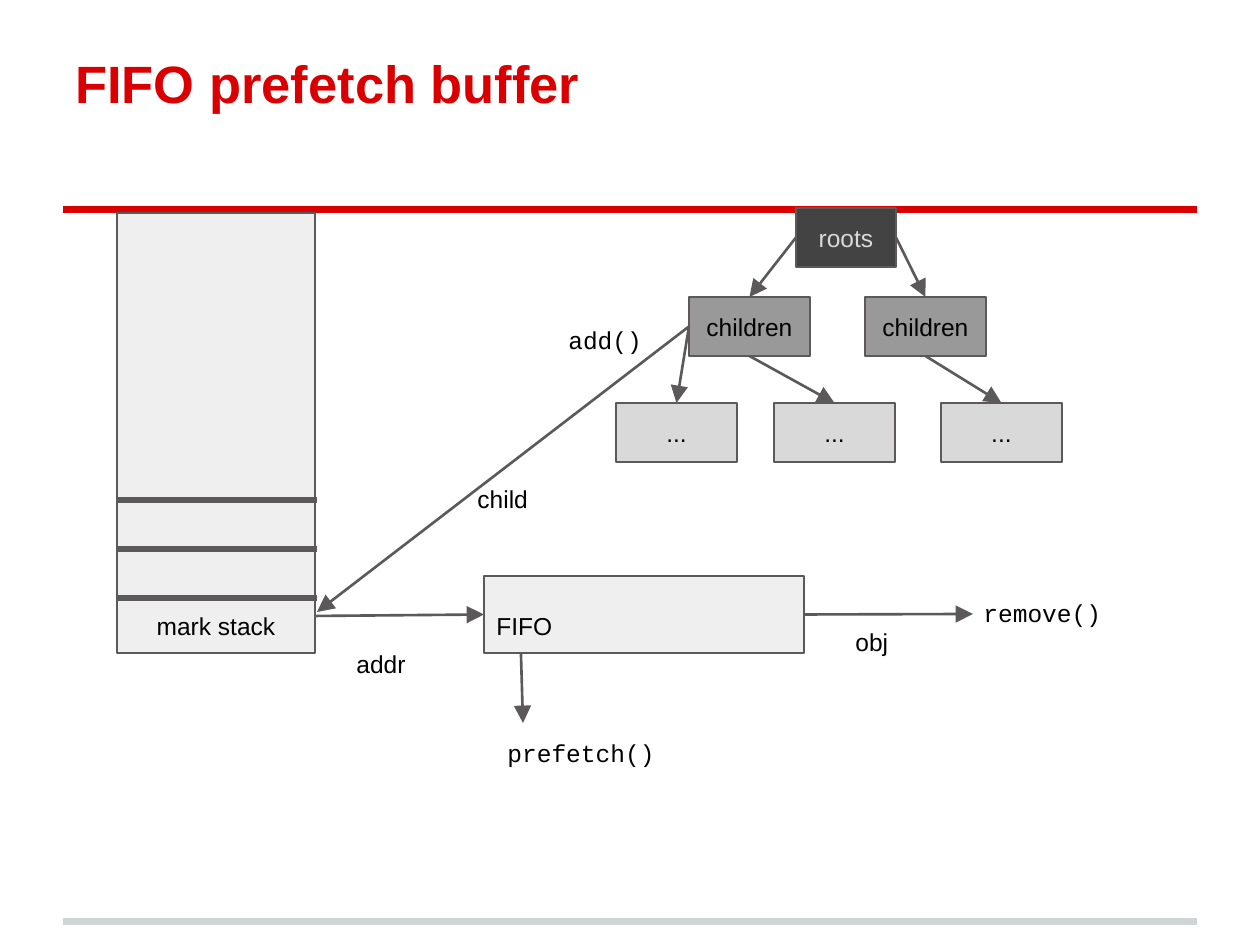
from lxml.etree import SubElement
from pptx import Presentation
from pptx.dml.color import RGBColor
from pptx.enum.shapes import MSO_CONNECTOR as Connector, MSO_SHAPE as Shape
from pptx.enum.text import MSO_ANCHOR as Anchor, PP_ALIGN as Align
from pptx.oxml.ns import qn
from pptx.util import Emu, Inches, Pt

PX = 914400 / 126
RED = RGBColor(0xDA, 0x00, 0x02)
RULE_GRAY = RGBColor(0xCF, 0xD4, 0xD4)
OUTLINE = RGBColor(0x5B, 0x59, 0x5A)
PALE = RGBColor(0xEF, 0xEF, 0xEF)
LIGHT = RGBColor(0xD9, 0xD9, 0xD9)
MEDIUM = RGBColor(0x99, 0x99, 0x99)
DARK = RGBColor(0x43, 0x43, 0x43)
BLACK = RGBColor(0x00, 0x00, 0x00)

TOP, LEFT, BOTTOM, RIGHT = range(4)
SANS, MONO = "Arial", "Courier New"

TITLE = ("FIFO prefetch buffer", (63, 38, 1134, 158))
RULES = [(922, RULE_GRAY), (210, RED)]
RULE_SPAN = (63, 1197)

NODE_HEIGHT, NODE_WIDTH = 59, 121
TREE_ROWS = [
    (208, 100, DARK, LIGHT, [("roots", "roots", 796)]),
    (297, NODE_WIDTH, MEDIUM, BLACK,
     [("left child", "children", 689), ("right child", "children", 865)]),
    (403, NODE_WIDTH, LIGHT, BLACK,
     [("leaf 1", "...", 616), ("leaf 2", "...", 774), ("leaf 3", "...", 941)]),
]
BUFFERS = [
    ("stack", "mark stack", (117, 213, 198, 440), Align.CENTER),
    ("fifo", "FIFO", (484, 576, 320, 77), Align.LEFT),
]
STACK_SPAN = (117, 317)
STACK_DIVIDERS = [500, 549, 598]

ARROWS = [
    (("roots", LEFT), ("left child", TOP)),
    (("roots", RIGHT), ("right child", TOP)),
    (("left child", LEFT), ("leaf 1", TOP)),
    (("left child", BOTTOM), ("leaf 2", TOP)),
    (("right child", BOTTOM), ("leaf 3", TOP)),
    (("left child", LEFT), (317, 612)),
    ((315, 616), ("fifo", LEFT)),
    (("fifo", RIGHT), (973, 614)),
    ((521, 654), (523, 723)),
]

LABEL_HEIGHT = 103
LABELS = [
    ("remove()", 971, 585, 160, MONO),
    ("prefetch()", 495, 725, 181, MONO),
    ("addr", 344, 636, 84, SANS),
    ("add()", 556, 312, 112, MONO),
    ("child", 465, 471, 84, SANS),
    ("obj", 843, 614, 68, SANS),
]

presentation = Presentation()
presentation.slide_width = Inches(10)
presentation.slide_height = Inches(7.5)
slide = presentation.slides.add_slide(presentation.slide_layouts[6])
boxes = {}


def px(*lengths):
    return [Emu(round(length * PX)) for length in lengths]


def write(shape, text, color=BLACK, font=SANS, size=14, bold=False,
          align=Align.LEFT, anchor=Anchor.TOP):
    frame = shape.text_frame
    frame.word_wrap = True
    frame.vertical_anchor = anchor
    for side in ("left", "top", "right", "bottom"):
        setattr(frame, f"margin_{side}", Inches(0.1))
    paragraph = frame.paragraphs[0]
    paragraph.alignment = align
    run = paragraph.add_run()
    run.text = text
    run.font.color.rgb = color
    for name, value in {"name": font, "size": Pt(size), "bold": bold}.items():
        setattr(run.font, name, value)


def add_text(text, bounds, **formats):
    write(slide.shapes.add_textbox(*px(*bounds)), text, **formats)


def add_box(key, text, bounds, fill, **formats):
    shape = slide.shapes.add_shape(Shape.RECTANGLE, *px(*bounds))
    shape.shadow.inherit = False
    shape.fill.solid()
    shape.fill.fore_color.rgb = fill
    shape.line.color.rgb = OUTLINE
    shape.line.width = Pt(1.5)
    write(shape, text, **formats)
    boxes[key] = shape


def add_line(start, end, color=OUTLINE, width=1.5, arrow=False):
    joined = [point[0] in boxes for point in (start, end)]
    points = [(0, 0) if is_box else point
              for is_box, point in zip(joined, (start, end))]
    line = slide.shapes.add_connector(Connector.STRAIGHT, *px(*points[0], *points[1]))
    if joined[0]:
        line.begin_connect(boxes[start[0]], start[1])
    if joined[1]:
        line.end_connect(boxes[end[0]], end[1])
    line.line.color.rgb = color
    line.line.width = Pt(width)
    if arrow:
        SubElement(line.line._get_or_add_ln(), qn("a:tailEnd"),
                   type="triangle", w="lg", len="lg")
    SubElement(line._element.spPr, qn("a:effectLst"))


for y, color in RULES:
    add_line((RULE_SPAN[0], y), (RULE_SPAN[1], y), color, 4)
add_text(*TITLE, color=RED, size=30, bold=True)

for key, text, bounds, align in BUFFERS:
    add_box(key, text, bounds, PALE, align=align, anchor=Anchor.BOTTOM)
for top, width, fill, color, nodes in TREE_ROWS:
    for key, text, left in nodes:
        add_box(key, text, (left, top, width, NODE_HEIGHT), fill,
                color=color, align=Align.CENTER, anchor=Anchor.MIDDLE)

for y in STACK_DIVIDERS:
    add_line((STACK_SPAN[0], y), (STACK_SPAN[1], y), width=3)
for start, end in ARROWS:
    add_line(start, end, arrow=True)
for text, left, top, width, font in LABELS:
    add_text(text, (left, top, width, LABEL_HEIGHT), font=font)

presentation.save("out.pptx")
